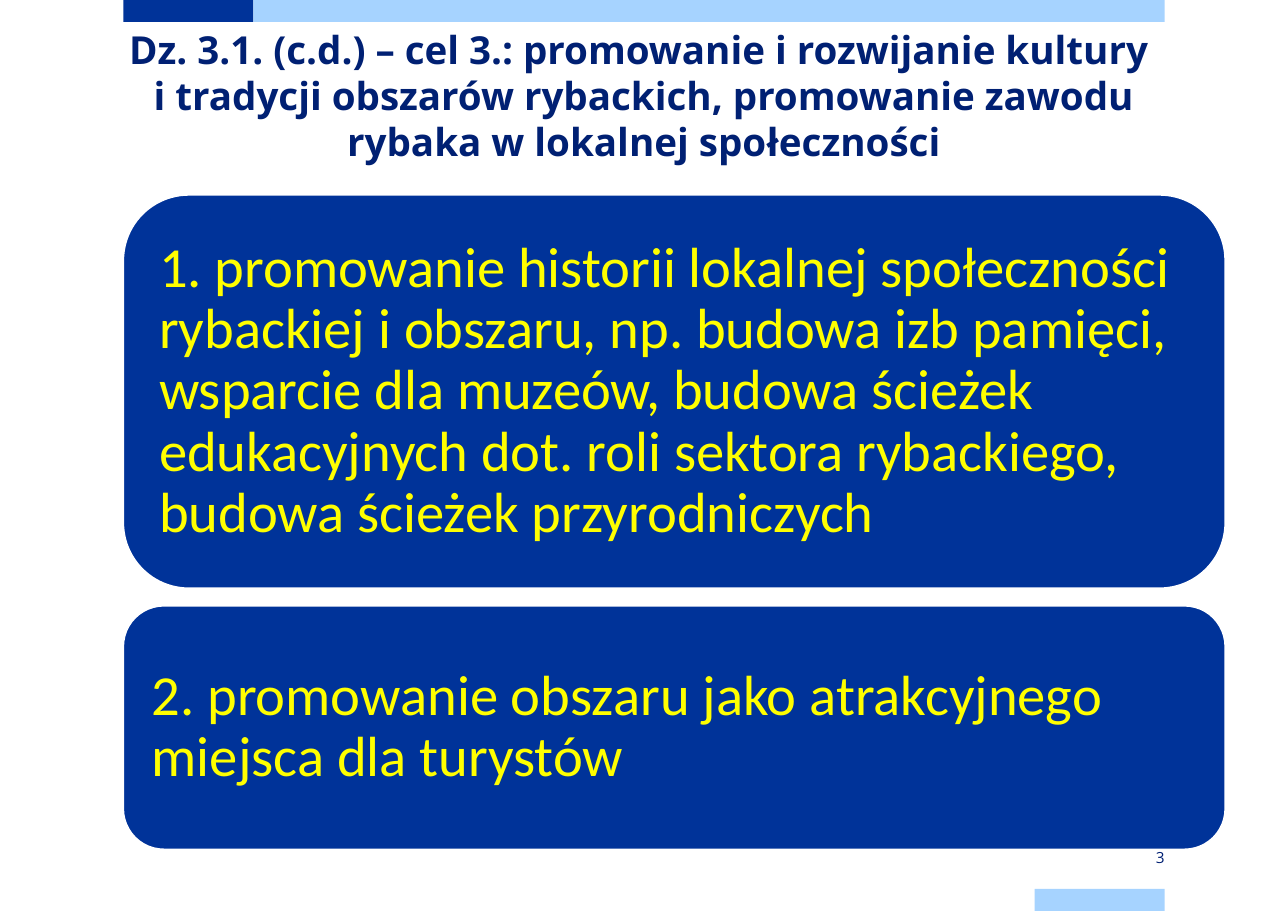
"""Build the slide on promoting the culture and traditions of fishing areas."""
from pptx import Presentation
from pptx import util as u
from pptx.dml.color import RGBColor
from pptx.enum import shapes, text

NAVY = RGBColor(0x00, 0x20, 0x73)
BLUE = RGBColor(0x00, 0x33, 0x99)
SKY = RGBColor(0xA6, 0xD3, 0xFF)
YELLOW = RGBColor(0xFF, 0xFF, 0x00)
WHITE = RGBColor(0xFF, 0xFF, 0xFF)

LEFT, BAR_W, BAR_H, CONTENT_W = 1.12, 1.18, 0.2, 9.45
RIGHT = LEFT + CONTENT_W
PAGE_W, PAGE_H = 11.69, 8.27


class SlideBuilder:
    heading_font = "Open Sans"
    body_font = "Calibri"

    def __init__(self, prs):
        self.slide = prs.slides.add_slide(prs.slide_layouts[5])

    def set_text(self, sp, words, font, size, color, align, anchor, insets, bold=False):
        tf = sp.text_frame
        tf.word_wrap = True
        tf.auto_size = text.MSO_AUTO_SIZE.NONE
        tf.vertical_anchor = anchor
        tf.margin_left = tf.margin_right = u.Inches(insets[0])
        tf.margin_top = tf.margin_bottom = u.Inches(insets[1])
        p = tf.paragraphs[0]
        p.text = words
        p.alignment = align
        p.font.name = font
        p.font.size = u.Pt(size)
        p.font.bold = bold
        p.font.color.rgb = color
        return p

    def block(self, kind, x, y, w, h, fill):
        sp = self.slide.shapes.add_shape(kind, *map(u.Inches, (x, y, w, h)))
        sp.shadow.inherit = False
        sp.fill.solid()
        sp.fill.fore_color.rgb = fill
        sp.line.fill.background()
        return sp

    def bar(self, x, y, w, fill):
        self.block(shapes.MSO_SHAPE.RECTANGLE, x, y, w, BAR_H, fill)

    def title(self, words):
        sp = self.slide.shapes.title
        sp.left, sp.top = u.Inches(LEFT), u.Inches(BAR_H)
        sp.width, sp.height = u.Inches(CONTENT_W), u.Inches(1.18)
        p = self.set_text(sp, words, self.heading_font, 25.2, NAVY,
                          text.PP_ALIGN.CENTER, text.MSO_ANCHOR.TOP, (0, 0), True)
        sp.text_frame.margin_top = u.Inches(0.04)
        p.line_spacing = u.Pt(30)

    def card(self, y, h, words):
        sp = self.block(shapes.MSO_SHAPE.ROUNDED_RECTANGLE, LEFT, y, 10, h, BLUE)
        sp.line.color.rgb = WHITE
        sp.line.width = u.Pt(1)
        p = self.set_text(sp, words, self.body_font, 37, YELLOW,
                          text.PP_ALIGN.LEFT, text.MSO_ANCHOR.MIDDLE, (0.15, 0.15))
        p.line_spacing = 0.9

    def page_number(self, words):
        box = map(u.Inches, (RIGHT - BAR_W, 7.68, BAR_W, 0.2))
        sp = self.slide.shapes.add_textbox(*box)
        self.set_text(sp, words, self.heading_font, 10, NAVY,
                      text.PP_ALIGN.RIGHT, text.MSO_ANCHOR.MIDDLE, (0, 0.08))


def main():
    prs = Presentation()
    prs.slide_width, prs.slide_height = u.Inches(PAGE_W), u.Inches(PAGE_H)
    s = SlideBuilder(prs)
    s.bar(LEFT, 0, BAR_W, BLUE)
    s.bar(LEFT + BAR_W, 0, CONTENT_W - BAR_W, SKY)
    s.bar(RIGHT - BAR_W, PAGE_H - BAR_H, BAR_W, SKY)
    s.title("Dz. 3.1. (c.d.) – cel 3.: promowanie i rozwijanie kultury \v"
            "i tradycji obszarów rybackich, promowanie zawodu "
            "rybaka w lokalnej społeczności")
    s.card(1.77, 3.57,
           "1. promowanie historii lokalnej społeczności rybackiej i obszaru, "
           "np. budowa izb pamięci, wsparcie dla muzeów, budowa ścieżek "
           "edukacyjnych dot. roli sektora rybackiego, budowa ścieżek "
           "przyrodniczych")
    s.card(5.5, 2.21,
           "2. promowanie obszaru jako atrakcyjnego miejsca dla turystów")
    s.page_number("3")
    prs.save("out.pptx")


if __name__ == "__main__":
    main()
